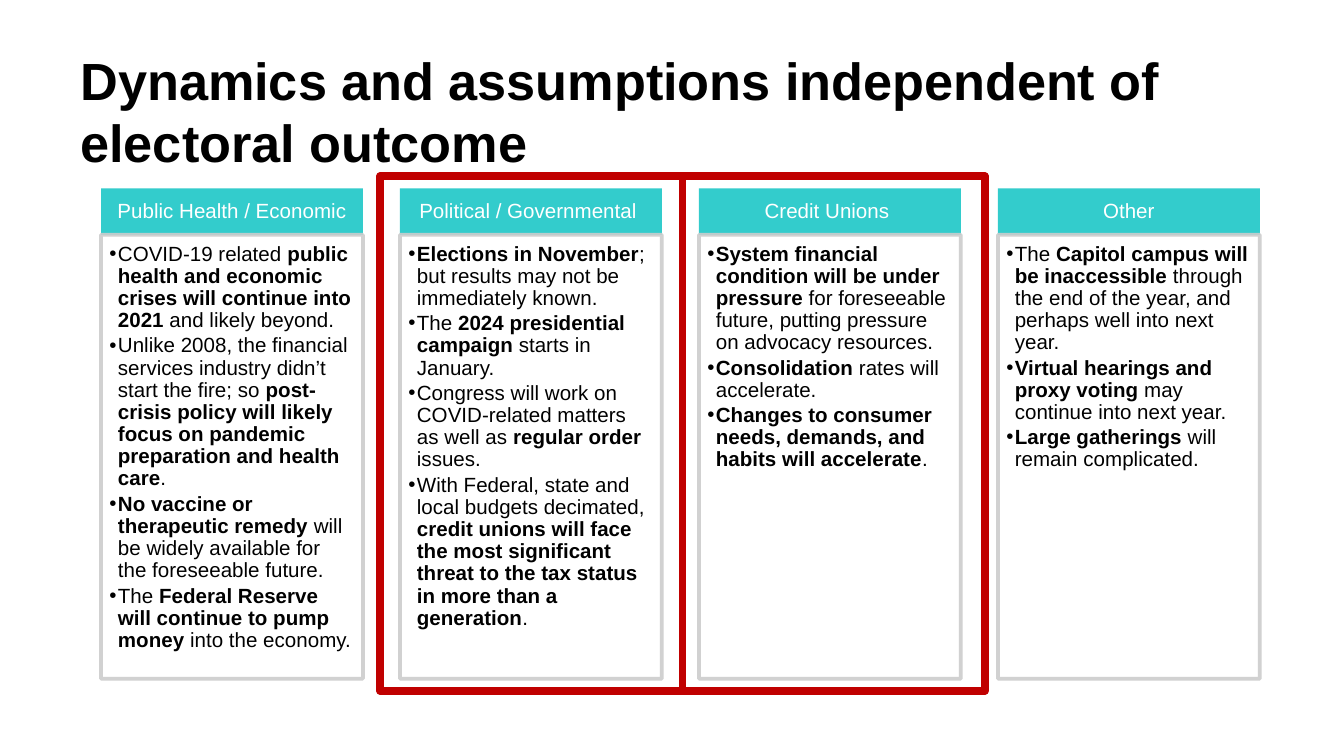
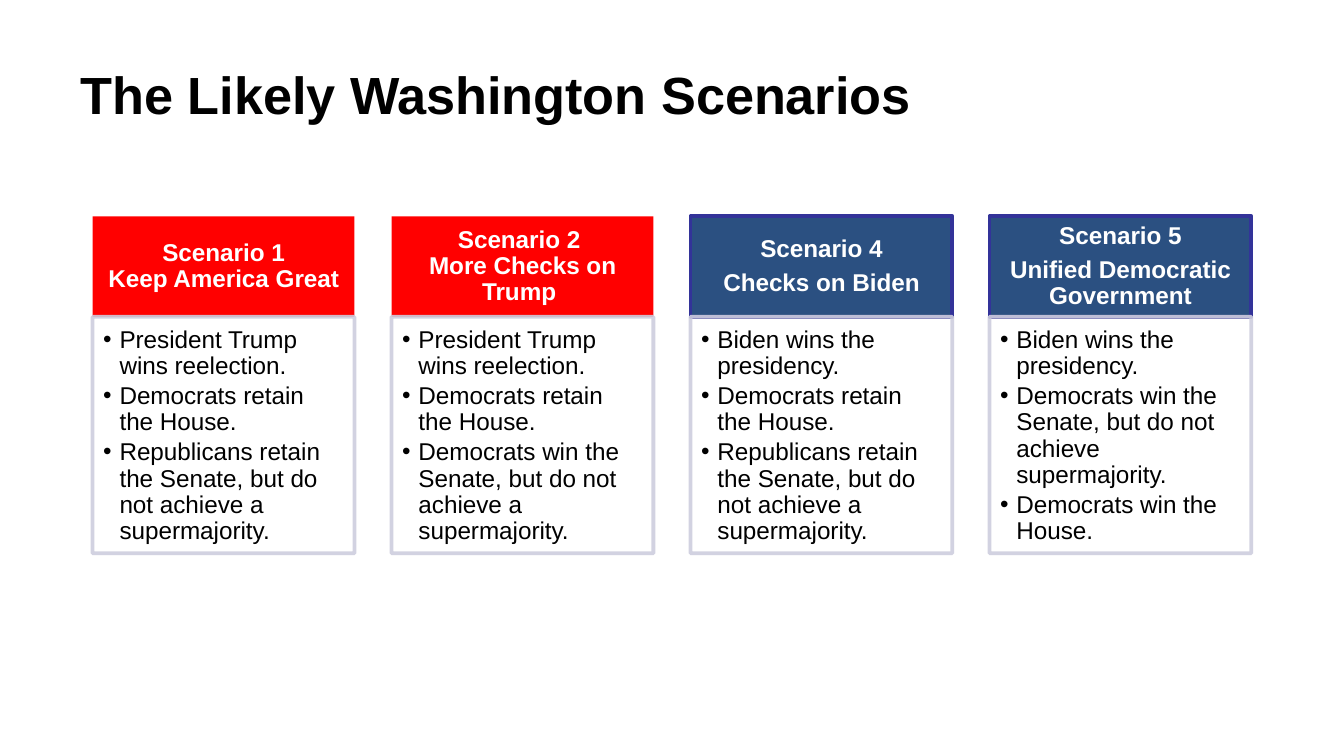
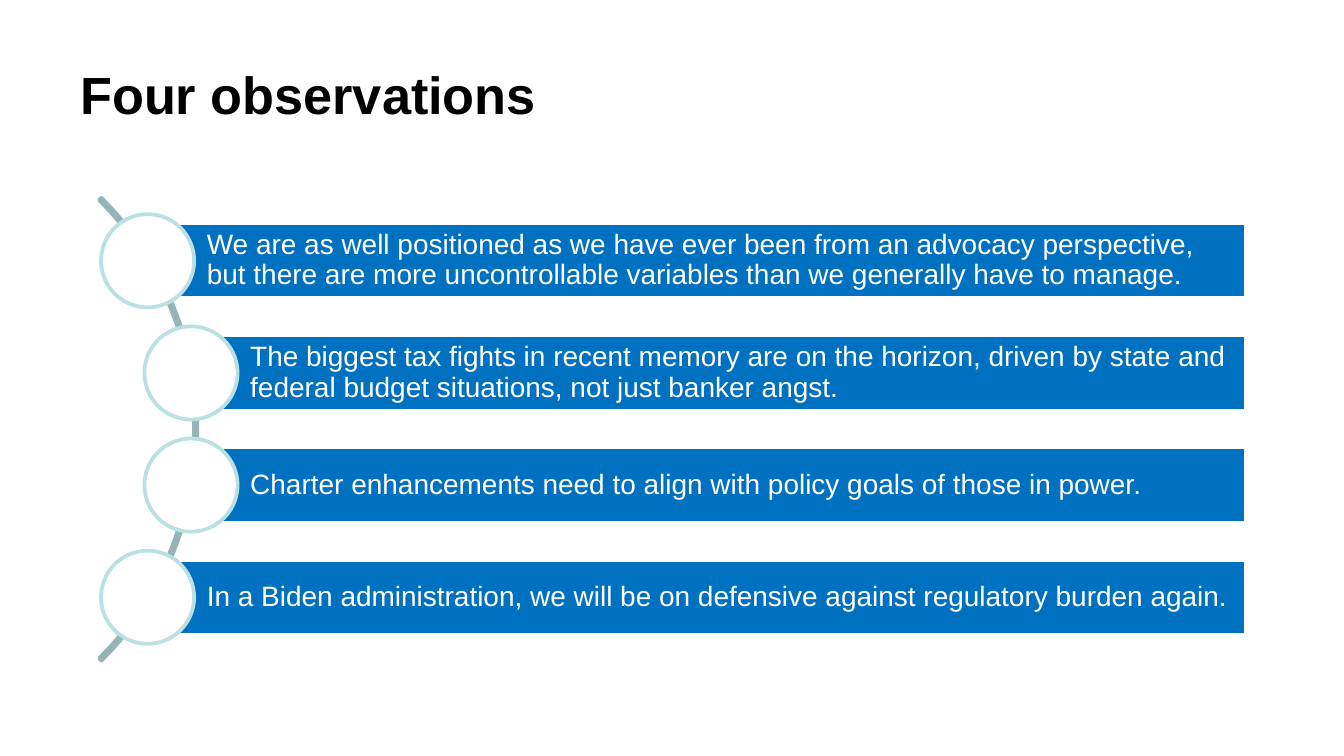
from pptx import Presentation
from pptx.dml.color import RGBColor
from pptx.enum.shapes import MSO_SHAPE
from pptx.enum.text import MSO_ANCHOR, MSO_AUTO_SIZE, PP_ALIGN
from pptx.oxml.ns import qn
from pptx.oxml.xmlchemy import OxmlElement
from pptx.util import Cm, Pt

FONT = "Arial"
COLORS = {
    "black": "000000", "white": "FFFFFF", "teal": "33CCCC", "gray": "CCCCCC",
    "highlight": "C00000", "republican": "FF0000", "democrat": "2B5081",
    "democrat_edge": "333399", "lavender": "CECEDE", "bar": "0070C0",
    "arc_edge": "96B3B6", "circle_edge": "BBE0E3",
}
COLUMN_WIDTH, COLUMN_PITCH = 4.95, 5.65

# Text between ** marks is bold
DYNAMICS = [
    ("Public Health / Economic", [
        "COVID-19 related **public health and economic crises will continue into 2021** and likely beyond.",
        "Unlike 2008, the financial services industry didn’t start the fire; so **post-crisis policy "
        "will likely focus on pandemic preparation and health care**.",
        "**No vaccine or therapeutic remedy **will be widely available for the foreseeable future.",
        "The **Federal Reserve will continue to pump money **into the economy.",
    ]),
    ("Political / Governmental ", [
        "**Elections in November**; but results may not be immediately known.",
        "The **2024 presidential campaign **starts in January.",
        "Congress will work on COVID-related matters as well as **regular order **issues.",
        "With Federal, state and local budgets decimated, **credit unions will face the most "
        "significant threat to the tax status in more than a generation**.",
    ]),
    ("Credit Unions ", [
        "**System financial condition will be under pressure **for foreseeable future, "
        "putting pressure on advocacy resources.",
        "**Consolidation **rates will accelerate.",
        "**Changes to consumer needs, demands, and habits will accelerate**.",
    ]),
    ("Other", [
        "The **Capitol campus will be inaccessible **through the end of the year, "
        "and perhaps well into next year.",
        "**Virtual hearings and proxy voting** may continue into next year.",
        "**Large gatherings **will remain complicated.",
    ]),
]

TRUMP_WINS = "President Trump wins reelection."
BIDEN_WINS = "Biden wins the presidency."
HOUSE_KEPT = "Democrats retain the House."
SENATE_KEPT = "Republicans retain the Senate, but do not achieve a supermajority."
REPUBLICAN = {"fill": "republican", "space_after": 0}
DEMOCRAT = {"fill": "democrat", "line": "democrat_edge", "space_after": 4}
SCENARIOS = [
    (["Scenario 1", "Keep America Great "], REPUBLICAN,
     [TRUMP_WINS, HOUSE_KEPT, SENATE_KEPT]),
    (["Scenario 2 ", "More Checks on Trump "], REPUBLICAN,
     [TRUMP_WINS, HOUSE_KEPT, "Democrats win the Senate, but do not achieve a supermajority."]),
    (["Scenario 4", "Checks on Biden"], DEMOCRAT,
     [BIDEN_WINS, HOUSE_KEPT, SENATE_KEPT]),
    (["Scenario 5", "Unified Democratic Government"], DEMOCRAT,
     [BIDEN_WINS, "Democrats win the Senate, but do not achieve supermajority.",
      "Democrats win the House."]),
]

OBSERVATIONS = [
    "We are as well positioned as we have ever been from an advocacy perspective, "
    "but there are more uncontrollable variables than we generally have to manage.",
    "The biggest tax fights in recent memory are on the horizon, "
    "driven by state and federal budget situations, not just banker angst.",
    "Charter enhancements need to align with policy goals of those in power.",
    "In a Biden administration, we will be on defensive against regulatory burden again.",
]


def rgb(name):
    return RGBColor.from_string(COLORS[name])


def add_bullet(paragraph, indent):
    paragraph.level = 1
    properties = paragraph._p.get_or_add_pPr()
    properties.set("marL", str(Cm(indent)))
    properties.set("indent", str(-Cm(indent)))
    for tag, attribute, value in (("a:buFont", "typeface", FONT), ("a:buChar", "char", "•")):
        element = OxmlElement(tag)
        element.set(attribute, value)
        properties.append(element)


def write(shape, paragraphs, size=11, color="black", bold=False, align=PP_ALIGN.LEFT,
          anchor=MSO_ANCHOR.MIDDLE, insets=(0.25, 0.13, 0.25, 0.13), line_spacing=0.9,
          space_after=0, bullet_indent=None):
    frame = shape.text_frame
    frame.word_wrap = True
    frame.auto_size = MSO_AUTO_SIZE.NONE
    frame.vertical_anchor = anchor
    (frame.margin_left, frame.margin_top,
     frame.margin_right, frame.margin_bottom) = map(Cm, insets)
    for number, text in enumerate(paragraphs):
        paragraph = frame.add_paragraph() if number else frame.paragraphs[0]
        if bullet_indent:
            add_bullet(paragraph, bullet_indent)
        paragraph.alignment = align
        paragraph.line_spacing = line_spacing
        paragraph.space_after = Pt(space_after)
        for part, words in enumerate(text.split("**")):
            if words:
                run = paragraph.add_run()
                run.text = words
                run.font.name = FONT
                run.font.size = Pt(size)
                run.font.bold = bold or part % 2 == 1
                run.font.color.rgb = rgb(color)


def add_figure(slide, preset, left, top, width, height, fill=None, line=None,
               line_width=2, line_opacity=100):
    figure = slide.shapes.add_shape(preset, Cm(left), Cm(top), Cm(width), Cm(height))
    figure.shadow.inherit = False
    if fill:
        figure.fill.solid()
        figure.fill.fore_color.rgb = rgb(fill)
    else:
        figure.fill.background()
    if line:
        figure.line.color.rgb = rgb(line)
        figure.line.width = Pt(line_width)
    else:
        figure.line.fill.background()
    if line_opacity < 100:
        outline = figure._element.spPr.find(qn("a:ln"))
        alpha = OxmlElement("a:alpha")
        alpha.set("val", str(line_opacity * 1000))
        outline.find(".//" + qn("a:srgbClr")).append(alpha)
    return figure


def add_titled_slide(deck, title, top=0.57):
    slide = deck.slides.add_slide(deck.slide_layouts[5])
    heading = slide.shapes.title
    heading.left, heading.top, heading.width, heading.height = map(Cm, (1.27, top, 22.86, 2.38))
    write(heading, [title], size=28, bold=True, line_spacing=1)
    return slide


def add_column(slide, left, top, heading, points, header_height, body_height, body_line,
               heading_format, body_format, fill, line=None):
    header = add_figure(slide, MSO_SHAPE.RECTANGLE, left, top, COLUMN_WIDTH, header_height,
                        fill=fill, line=line)
    write(header, heading, color="white", align=PP_ALIGN.CENTER, **heading_format)
    body = add_figure(slide, MSO_SHAPE.RECTANGLE, left, top + header_height, COLUMN_WIDTH,
                      body_height, line=body_line, line_opacity=90)
    write(body, points, anchor=MSO_ANCHOR.TOP, **body_format)


def build_dynamics(deck):
    slide = add_titled_slide(
        deck, "Dynamics and assumptions independent of electoral outcome", top=0.9)
    for index, (heading, points) in enumerate(DYNAMICS):
        add_column(slide, 1.91 + index * COLUMN_PITCH, 3.56, [heading], points,
                   header_height=0.88, body_height=8.39, body_line="gray", fill="teal",
                   heading_format={"insets": (0.23, 0.12, 0.23, 0.12)},
                   body_format={"insets": (0.16, 0.16, 0.19, 0.25), "space_after": 1.7,
                                "bullet_indent": 0.16})
    # Frames around the two middle columns
    frame_width = 5.71
    for index in range(2):
        add_figure(slide, MSO_SHAPE.RECTANGLE, 7.19 + index * frame_width, 3.33,
                   frame_width, 9.73, line="highlight", line_width=4.25)


def build_scenarios(deck):
    slide = add_titled_slide(deck, "The Likely Washington Scenarios")
    for index, (heading, party, outcomes) in enumerate(SCENARIOS):
        add_column(slide, 1.75 + index * COLUMN_PITCH, 4.09, heading, outcomes,
                   header_height=1.9, body_height=4.47, body_line="lavender",
                   fill=party["fill"], line=party.get("line"),
                   heading_format={"size": 13, "bold": True, "insets": (0.25, 0.15, 0.25, 0.15),
                                   "space_after": party["space_after"]},
                   body_format={"size": 13, "insets": (0.2, 0.2, 0.25, 0.28),
                                "space_after": 2, "bullet_indent": 0.31})


def build_observations(deck):
    slide = add_titled_slide(deck, "Four observations")
    # Arc that the circles sit on
    arc = add_figure(slide, MSO_SHAPE.BLOCK_ARC, -8.64, 1.93, 12.37, 12.37,
                     fill="bar", line="arc_edge")
    for index, value in enumerate((189, 27, 0.005)):
        arc.adjustments[index] = value
    # Bars with their circles
    bar_right, bar_height, circle_size = 23.55, 1.42, 1.76
    for index, observation in enumerate(OBSERVATIONS):
        left = 3.61 if index in (1, 2) else 2.79
        top = 4.22 + index * 2.12
        bar = add_figure(slide, MSO_SHAPE.RECTANGLE, left, top, bar_right - left, bar_height,
                         fill="bar", line="white")
        write(bar, [observation], size=15, color="white", insets=(1.12, 0.1, 0.1, 0.1))
        add_figure(slide, MSO_SHAPE.OVAL, left - circle_size / 2,
                   top + (bar_height - circle_size) / 2, circle_size, circle_size,
                   fill="white", line="circle_edge")


def main():
    deck = Presentation()
    deck.slide_width, deck.slide_height = Cm(25.4), Cm(14.29)
    build_dynamics(deck)
    build_scenarios(deck)
    build_observations(deck)
    deck.save("out.pptx")


if __name__ == "__main__":
    main()
